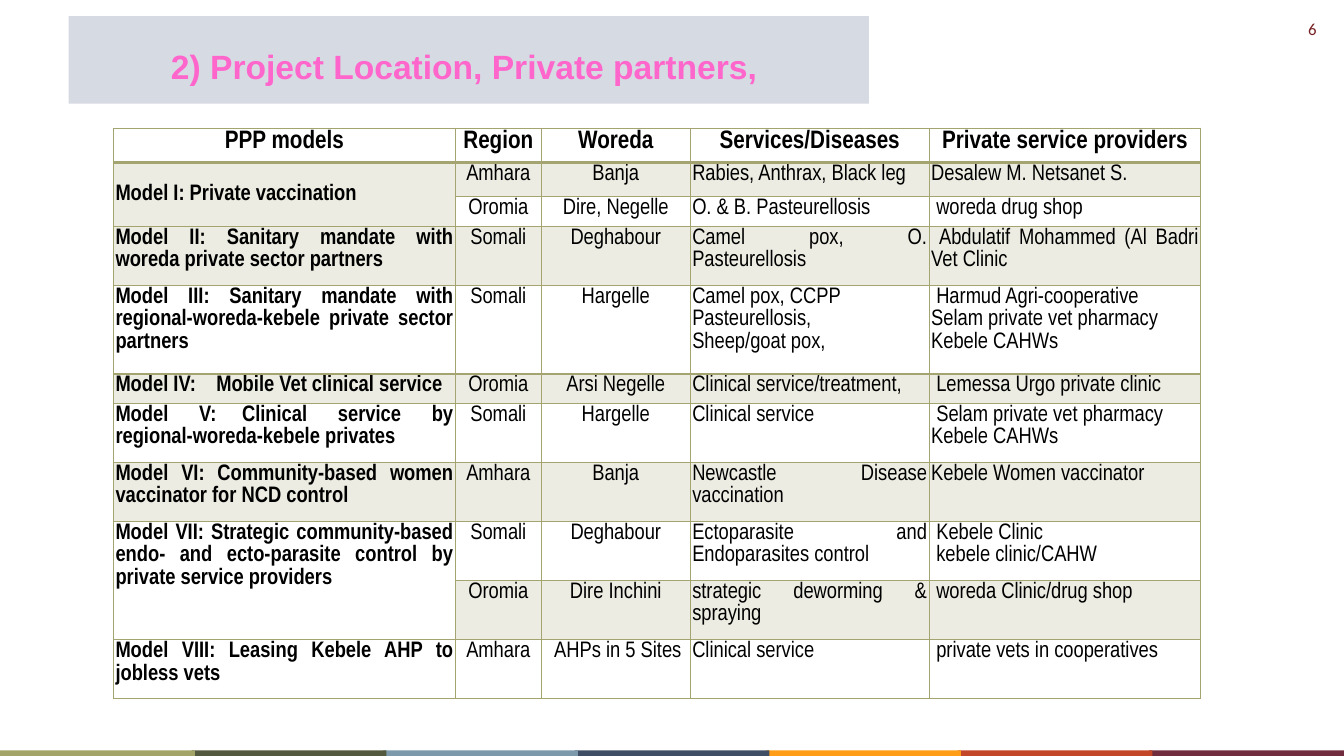
"""Build the slide listing PPP models with their locations, services and private partners."""
from dataclasses import dataclass

from lxml import etree
from pptx import Presentation
from pptx.dml.color import RGBColor
from pptx.enum import shapes, text
from pptx.oxml import ns
from pptx.util import Pt


@dataclass(frozen=True)
class Theme:
    heading_font: str = "Arial"
    table_font: str = "Arial Narrow"
    number_font: str = "Calibri"
    heading_size: int = 24
    header_size: int = 18
    body_size: int = 16
    number_size: int = 12
    heading: str = "FF66CC"
    heading_band: str = "D6DAE3"
    number: str = "762123"
    ink: str = "000000"
    olive: str = "A3A470"
    strip: tuple = ("A3A467", "53593E", "7C98AB", "404E65", "FF9E16", "C34628", "712C3D")


theme = Theme()


def add_run(paragraph, words, font, size, color, bold=False):
    run = paragraph.add_run()
    run.text = words
    run.font.name = font
    run.font.size = Pt(size)
    run.font.bold = bold
    run.font.color.rgb = RGBColor.from_string(color)


def add_band(left, top, width, height, color):
    band = slide.shapes.add_shape(
        shapes.MSO_SHAPE.RECTANGLE, Pt(left), Pt(top), Pt(width), Pt(height))
    band.shadow.inherit = False
    band.fill.solid()
    band.fill.fore_color.rgb = RGBColor.from_string(color)
    band.line.fill.background()
    return band


deck = Presentation()
deck.slide_width, deck.slide_height = Pt(960), Pt(540)
slide = deck.slides.add_slide(deck.slide_layouts[6])

page_number = slide.shapes.add_textbox(Pt(897), Pt(10), Pt(50.5), Pt(22)).text_frame
page_number.word_wrap = True
page_number.paragraphs[0].alignment = text.PP_ALIGN.RIGHT
add_run(page_number.paragraphs[0], "6", theme.number_font, theme.number_size, theme.number)

for position, color in reversed(list(enumerate(theme.strip))):
    add_band(position * 136.8, 536, 139.2, 4, color)

heading = add_band(49, 11.5, 571.7, 62.6, theme.heading_band).text_frame
heading.word_wrap = True
heading.vertical_anchor = text.MSO_ANCHOR.MIDDLE
heading.margin_top = Pt(13)
heading.paragraphs[0].alignment = text.PP_ALIGN.CENTER
add_run(heading.paragraphs[0], "2) Project Location, Private partners, ",
        theme.heading_font, theme.heading_size, theme.heading, bold=True)

partners = [
    ("PPP models", "Region", "Woreda", "Services/Diseases", "Private service providers"),
    ("Model I: Private vaccination", "Amhara", "Banja",
     "Rabies, Anthrax, Black leg", "Desalew M. Netsanet S."),
    ("", "Oromia", "Dire, Negelle", "O. & B. Pasteurellosis", " woreda drug shop"),
    ("Model II: Sanitary mandate with woreda private sector partners", "Somali", "Deghabour",
     "Camel pox, O. Pasteurellosis", " Abdulatif Mohammed (Al Badri Vet Clinic"),
    ("Model III: Sanitary mandate with regional-woreda-kebele private sector partners",
     "Somali", "Hargelle", "Camel pox, CCPP\nPasteurellosis,\nSheep/goat pox,",
     " Harmud Agri-cooperative\nSelam private vet pharmacy\nKebele CAHWs"),
    ("Model IV:\tMobile Vet clinical service", "Oromia", "Arsi Negelle",
     "Clinical service/treatment,", " Lemessa Urgo private clinic"),
    ("Model V:\tClinical service by regional-woreda-kebele privates", "Somali", "Hargelle",
     "Clinical service", " Selam private vet pharmacy\nKebele CAHWs"),
    ("Model VI: Community-based women vaccinator for NCD control", "Amhara", "Banja",
     "Newcastle Disease vaccination", "Kebele Women vaccinator"),
    ("Model VII: Strategic community-based endo- and ecto-parasite control by "
     "private service providers", "Somali", "Deghabour",
     "Ectoparasite and Endoparasites control", " Kebele Clinic\n kebele clinic/CAHW"),
    ("", "Oromia", "Dire Inchini", "strategic deworming & spraying",
     " woreda Clinic/drug shop"),
    ("Model VIII: Leasing Kebele AHP to jobless vets", "Amhara", " AHPs in 5 Sites",
     "Clinical service", " private vets in cooperatives"),
]
column_widths = [244.2, 61.4, 106.4, 170.7, 193.9]
row_heights = [24.5, 24.5] + [21.1 * lines for lines in (1, 2, 3, 1, 2, 2, 2, 2, 2)]

grid = slide.shapes.add_table(
    len(partners), len(column_widths), Pt(81.1), Pt(91.6),
    Pt(sum(column_widths)), Pt(sum(row_heights))).table
grid.horz_banding = False
for column, width in zip(grid.columns, column_widths):
    column.width = Pt(width)
for row, height in zip(grid.rows, row_heights):
    row.height = Pt(height)

for row_index, entries in enumerate(partners):
    is_header = row_index == 0
    for column_index, entry in enumerate(entries):
        cell = grid.cell(row_index, column_index)
        cell.margin_left = cell.margin_right = Pt(1.44)
        cell.margin_top = cell.margin_bottom = 0
        properties = cell._tc.get_or_add_tcPr()
        for side in "LRTB":
            thick = (row_index, side) in ((0, "B"), (1, "T"))
            border = etree.SubElement(
                properties, ns.qn("a:ln" + side), w=str(Pt(2 if thick else 1)))
            paint = etree.SubElement(border, ns.qn("a:solidFill"))
            etree.SubElement(paint, ns.qn("a:srgbClr"), val=theme.olive)
        if row_index % 2:
            cell.fill.solid()
            cell.fill.fore_color.rgb = RGBColor.from_string(theme.olive)
            tint = properties.find(ns.qn("a:solidFill")).find(ns.qn("a:srgbClr"))
            etree.SubElement(tint, ns.qn("a:alpha"), val="20000")
        else:
            cell.fill.background()
        if not entry:
            continue
        for line_index, line in enumerate(entry.split("\n")):
            frame = cell.text_frame
            paragraph = frame.add_paragraph() if line_index else frame.paragraphs[0]
            centred = is_header or column_index in (1, 2)
            paragraph.alignment = text.PP_ALIGN.CENTER if centred else text.PP_ALIGN.JUSTIFY
            paragraph.line_spacing = 1.07
            add_run(paragraph, line, theme.table_font,
                    theme.header_size if is_header else theme.body_size,
                    theme.ink, bold=is_header or column_index == 0)

for first_row in (1, 8):
    grid.cell(first_row, 0).merge(grid.cell(first_row + 1, 0))
grid.cell(1, 0).vertical_anchor = text.MSO_ANCHOR.MIDDLE

deck.save("out.pptx")
